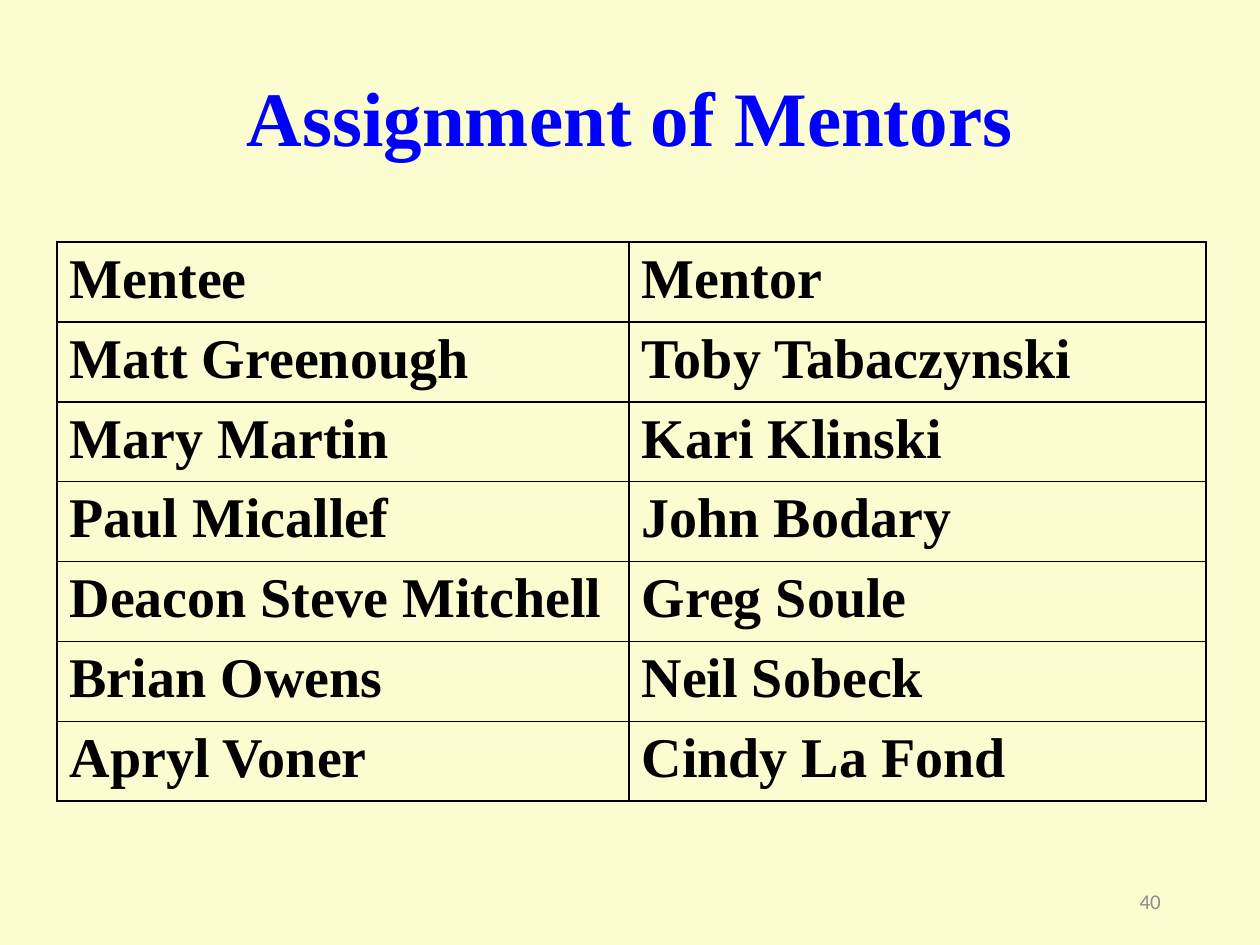
from lxml import etree
from pptx import Presentation
from pptx import util as u
from pptx.dml.color import RGBColor
from pptx.enum import text as t
from pptx.oxml import ns

HUES = {"page": "FBFCD0", "title": "0000FF", "ink": "000000", "num": "8C8C8C"}
PAIRS = [
    ("Mentee", "Mentor"),
    ("Matt Greenough", "Toby Tabaczynski"),
    ("Mary Martin", "Kari Klinski"),
    ("Paul Micallef", "John Bodary"),
    ("Deacon Steve Mitchell", "Greg Soule"),
    ("Brian Owens", "Neil Sobeck"),
    ("Apryl Voner", "Cindy La Fond"),
]


def write(frame, words, size=32, face="Times New Roman", hue="ink", bold=True,
          align=t.PP_ALIGN.LEFT, anchor=t.MSO_ANCHOR.TOP):
    """Fill a text frame with one formatted paragraph."""
    frame.word_wrap = True
    frame.vertical_anchor = anchor
    para = frame.paragraphs[0]
    para.alignment = align
    run = para.add_run()
    run.text = words
    font = run.font
    font.size, font.name, font.bold = u.Pt(size), face, bold
    font.color.rgb = RGBColor.from_string(HUES[hue])


def edge(cell, width=1):
    """Draw a solid line on all four sides of a cell."""
    props = cell._tc.get_or_add_tcPr()
    for side in "LRTB":
        line = etree.SubElement(props, ns.qn(f"a:ln{side}"), w=str(u.Pt(width)))
        fill = etree.SubElement(line, ns.qn("a:solidFill"))
        etree.SubElement(fill, ns.qn("a:srgbClr"), val=HUES["ink"])


class Page:
    """Hold the current slide and its styles."""

    def __init__(self, deck):
        self.slide = deck.slides.add_slide(deck.slide_layouts[5])
        fill = self.slide.background.fill
        fill.solid()
        fill.fore_color.rgb = RGBColor.from_string(HUES["page"])

    def title(self, words, left, top, width, height):
        """Place and format the title."""
        head = self.slide.shapes.title
        head.left, head.top = u.Cm(left), u.Cm(top)
        head.width, head.height = u.Cm(width), u.Cm(height)
        write(head.text_frame, words, size=44, hue="title", align=t.PP_ALIGN.CENTER)

    def table(self, rows, left, top, widths, height):
        """Add a ruled table without fills."""
        grid = self.slide.shapes.add_table(
            len(rows), len(widths), u.Cm(left), u.Cm(top),
            u.Cm(sum(widths)), u.Cm(height * len(rows))).table
        grid.first_row = grid.horz_banding = False
        for col, width in zip(grid.columns, widths):
            col.width = u.Cm(width)
        for line, names in zip(grid.rows, rows):
            for cell, name in zip(line.cells, names):
                edge(cell)
                cell.fill.background()
                write(cell.text_frame, name)

    def number(self, words, left, top, width, height):
        """Add the page number."""
        box = self.slide.shapes.add_textbox(
            u.Cm(left), u.Cm(top), u.Cm(width), u.Cm(height))
        write(box.text_frame, words, size=12, face="Calibri", hue="num", bold=False,
              align=t.PP_ALIGN.RIGHT, anchor=t.MSO_ANCHOR.MIDDLE)


def main():
    """Build and save the deck."""
    deck = Presentation()
    deck.slide_width, deck.slide_height = u.Cm(25.4), u.Cm(19.05)
    page = Page(deck)
    page.title("Assignment of Mentors", 0, 1.27, 25.4, 2.13)
    page.table(PAIRS, 1.15, 4.88, (11.53, 11.63), 1.61)
    page.number("40", 17.93, 17.65, 5.72, 1.02)
    deck.save("out.pptx")


if __name__ == "__main__":
    main()
